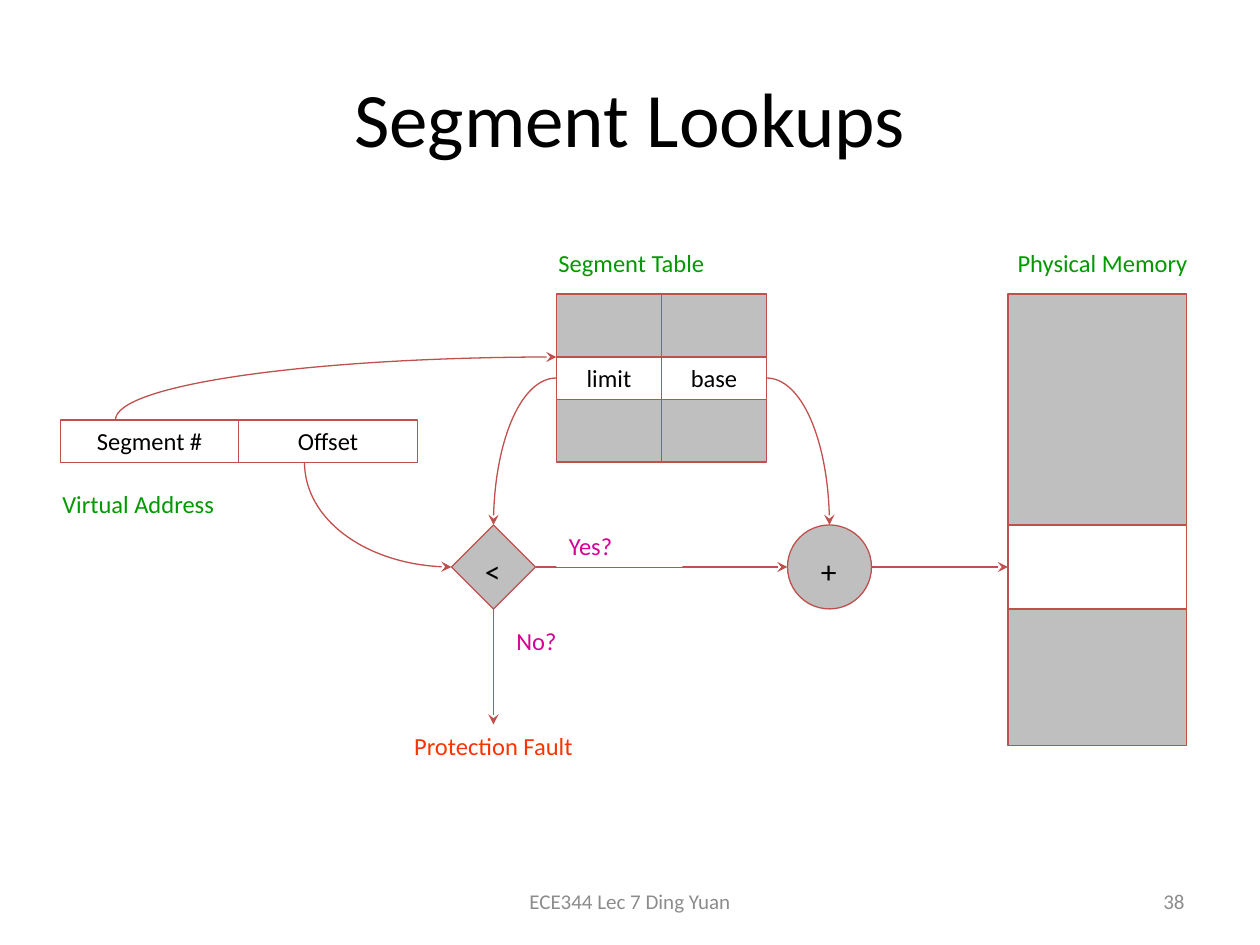
from dataclasses import dataclass
from typing import Optional

import pptx
import pptx.dml.color
import pptx.enum.shapes
import pptx.enum.text
import pptx.oxml
import pptx.oxml.ns
import pptx.util
from pptx.dml.color import RGBColor

Pt = pptx.util.Pt
Align = pptx.enum.text.PP_ALIGN
Anchor = pptx.enum.text.MSO_ANCHOR
Kind = pptx.enum.shapes.MSO_SHAPE
qn = pptx.oxml.ns.qn

BLACK = RGBColor(0x00, 0x00, 0x00)
WHITE = RGBColor(0xFF, 0xFF, 0xFF)
GRAY = RGBColor(0xBF, 0xBF, 0xBF)
FOOTER_GRAY = RGBColor(0x8C, 0x8C, 0x8C)
RED = RGBColor(0xC0, 0x50, 0x4D)
FAULT_RED = RGBColor(0xFF, 0x33, 0x00)
GREEN = RGBColor(0x00, 0x99, 0x00)
MAGENTA = RGBColor(0xD6, 0x00, 0x93)

FONT = "Calibri"
LINE_WIDTH = 0.75
ROUNDING = 0.55
FIELD_HEIGHT = 24.5

Point = tuple[float, float]


@dataclass
class Box:
    left: float
    top: float
    width: float
    height: float
    fill: RGBColor = WHITE
    text: str = ""
    kind: Kind = Kind.RECTANGLE
    outlined: bool = True


@dataclass
class Label:
    text: str
    left: float
    top: float
    width: float
    height: float = 24
    color: RGBColor = GREEN
    align: Align = Align.LEFT
    size: float = 14
    fill: Optional[RGBColor] = WHITE
    anchor: Anchor = Anchor.TOP


@dataclass
class Curve:
    side: Point
    end: Point
    arrow_at: str


def write_text(shape, text: str, size: float, color: RGBColor, align: Align, anchor: Anchor) -> None:
    frame = shape.text_frame
    frame.word_wrap = True
    frame.vertical_anchor = anchor
    paragraph = frame.paragraphs[0]
    paragraph.alignment = align
    run = paragraph.add_run()
    run.text = text
    run.font.name = FONT
    run.font.size = Pt(size)
    run.font.color.rgb = color


def draw_box(slide, box: Box):
    shape = slide.shapes.add_shape(box.kind, Pt(box.left), Pt(box.top), Pt(box.width), Pt(box.height))
    shape.shadow.inherit = False
    shape.fill.solid()
    shape.fill.fore_color.rgb = box.fill
    if box.outlined:
        shape.line.color.rgb = RED
        shape.line.width = Pt(LINE_WIDTH)
    else:
        shape.line.fill.background()
    if box.text:
        write_text(shape, box.text, 14, BLACK, Align.CENTER, Anchor.TOP)
    return shape


def draw_label(slide, label: Label):
    shape = slide.shapes.add_textbox(Pt(label.left), Pt(label.top), Pt(label.width), Pt(label.height))
    if label.fill is not None:
        shape.fill.solid()
        shape.fill.fore_color.rgb = label.fill
    write_text(shape, label.text, label.size, label.color, label.align, label.anchor)
    return shape


def style_arrow(shape, arrow_at: str) -> None:
    shape.line.color.rgb = RED
    shape.line.width = Pt(LINE_WIDTH)
    line = shape.line._get_or_add_ln()
    pptx.oxml.ns.nsdecls("a")
    line.append(pptx.oxml.parse_xml(f'<a:{arrow_at} {pptx.oxml.ns.nsdecls("a")} type="stealth"/>'))


def draw_arrow(slide, start: Point, end: Point):
    straight = pptx.enum.shapes.MSO_CONNECTOR.STRAIGHT
    connector = slide.shapes.add_connector(straight, *map(Pt, start + end))
    style_arrow(connector, "tailEnd")
    effects = pptx.oxml.parse_xml(f'<a:effectLst {pptx.oxml.ns.nsdecls("a")}/>')
    connector._element.spPr.append(effects)
    return connector


def draw_curve(slide, curve: Curve) -> None:
    (side_x, side_y), (end_x, end_y) = curve.side, curve.end
    controls = [
        (side_x + ROUNDING * (end_x - side_x), side_y),
        (end_x, end_y + ROUNDING * (side_y - end_y)),
    ]
    builder = slide.shapes.build_freeform(side_x, side_y, scale=float(Pt(1)))
    builder.add_line_segments(controls + [curve.end], close=False)
    shape = builder.convert_to_shape()
    shape.shadow.inherit = False
    shape.fill.background()
    outline = next(shape._element.iter(qn("a:path")))
    bezier = pptx.oxml.parse_xml(f'<a:cubicBezTo {pptx.oxml.ns.nsdecls("a")}/>')
    for segment in outline.findall(qn("a:lnTo")):
        bezier.append(segment[0])
        outline.remove(segment)
    outline.append(bezier)
    style_arrow(shape, curve.arrow_at)


def main() -> None:
    presentation = pptx.Presentation()
    presentation.slide_width, presentation.slide_height = Pt(720), Pt(540)
    slide = presentation.slides.add_slide(presentation.slide_layouts[5])
    title = slide.shapes.title
    title.left, title.top, title.width, title.height = Pt(36), Pt(21.6), Pt(648), Pt(90)
    write_text(title, "Segment Lookups", 44, BLACK, Align.CENTER, Anchor.MIDDLE)

    draw_box(slide, Box(576, 168, 102, 258, GRAY))
    memory_segment = draw_box(slide, Box(576, 300, 102, 48))
    for column, text in enumerate(("limit", "base")):
        left = 318 + 60 * column
        draw_box(slide, Box(left, 168, 60, 96, GRAY))
        draw_box(slide, Box(left, 204, 60, FIELD_HEIGHT, text=text))
    for column, text in enumerate(("Segment #", "Offset")):
        draw_box(slide, Box(34.5 + 102 * column, 240, 102, FIELD_HEIGHT, text=text))
    draw_box(slide, Box(450, 300, 48, 48, GRAY, kind=Kind.OVAL))
    comparison = draw_box(slide, Box(258, 300, 48, 48, GRAY, kind=Kind.DIAMOND))
    fault = draw_label(slide, Label("Protection Fault", 216, 414, 132, color=FAULT_RED, align=Align.CENTER))

    comparison_to_sum = draw_arrow(slide, (306, 324), (450, 324))
    comparison_to_sum.begin_connect(comparison, 3)
    sum_to_memory = draw_arrow(slide, (498, 324), (576, 324))
    sum_to_memory.end_connect(memory_segment, 1)
    comparison_to_fault = draw_arrow(slide, (282, 348), (282, 414))
    comparison_to_fault.begin_connect(comparison, 2)
    comparison_to_fault.end_connect(fault, 0)

    for curve in (
        Curve((318, 216), (282, 300), "tailEnd"),
        Curve((438, 216), (474, 300), "tailEnd"),
        Curve((318, 204), (66, 240), "headEnd"),
        Curve((258, 324), (174, 264), "headEnd"),
    ):
        draw_curve(slide, curve)

    for label in (
        Label("+", 462, 312, 30, 26.5, BLACK, size=18, fill=None),
        Label("<", 270, 312, 36, 26.5, BLACK, size=18, fill=None),
        Label("Virtual Address", 28.5, 276, 132),
        Label("Segment Table", 312, 138, 132),
        Label("Physical Memory", 564, 138, 132, align=Align.CENTER),
        Label("Yes?", 318, 300, 72, color=MAGENTA),
        Label("No?", 288, 354, 72, color=MAGENTA),
        Label("ECE344 Lec 7 Ding Yuan", 246, 500.5, 228, 28.75, FOOTER_GRAY,
              Align.CENTER, 12, None, Anchor.MIDDLE),
        Label("38", 516, 500.5, 168, 28.75, FOOTER_GRAY,
              Align.RIGHT, 12, None, Anchor.MIDDLE),
    ):
        draw_label(slide, label)

    presentation.save("out.pptx")


if __name__ == "__main__":
    main()
